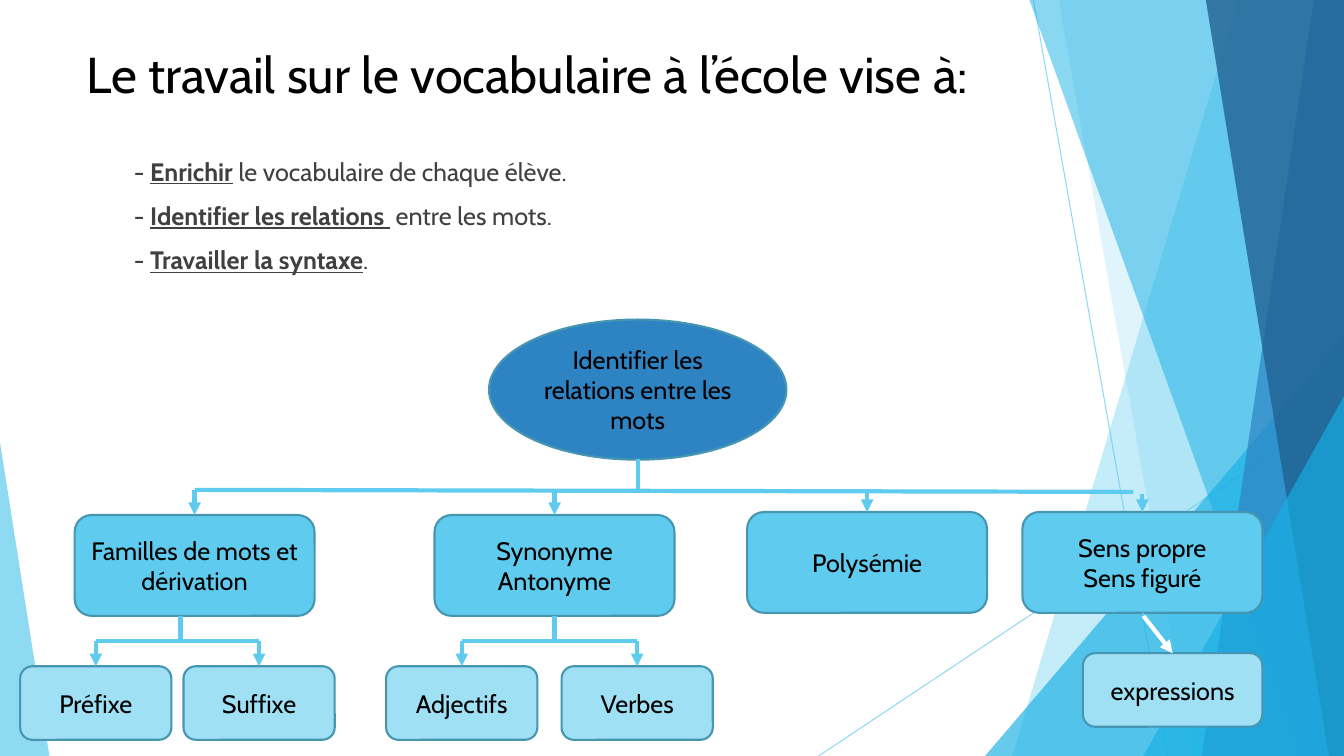
import pptx
import pptx.dml.color
import pptx.enum.shapes
import pptx.enum.text
import pptx.oxml
import pptx.oxml.ns
import pptx.util
from pptx.util import Inches

RGBColor = pptx.dml.color.RGBColor
MSO_SHAPE = pptx.enum.shapes.MSO_SHAPE
PP_ALIGN = pptx.enum.text.PP_ALIGN
MSO_ANCHOR = pptx.enum.text.MSO_ANCHOR

BLACK = RGBColor(0x00, 0x00, 0x00)
WHITE = RGBColor(0xFF, 0xFF, 0xFF)
GREY = RGBColor(0x40, 0x40, 0x40)
SKY = RGBColor(0x5F, 0xCB, 0xEF)
PALE_SKY = RGBColor(0x9F, 0xE0, 0xF5)
CYAN = RGBColor(0x17, 0xB0, 0xE4)
BLUE = RGBColor(0x2E, 0x83, 0xC3)
NAVY = RGBColor(0x22, 0x62, 0x92)
OUTLINE = RGBColor(0x46, 0x96, 0xB1)

WIDTH, HEIGHT = 13.33, 7.5


class SlideBuilder:
    font = "Cabin"
    text_size = 18

    def __init__(self, slide):
        self.slide = slide

    def set_alpha(self, color_format_parent, percent):
        """Make the solid colour found under an XML element translucent."""
        color = color_format_parent.find(".//" + pptx.oxml.ns.qn("a:srgbClr"))
        alpha = color.makeelement(pptx.oxml.ns.qn("a:alpha"), {"val": str(percent * 1000)})
        color.append(alpha)

    def add_run(self, paragraph, text, color, size=None, strong=False):
        """Add a run; a strong one is bold and underlined."""
        run = paragraph.add_run()
        run.text = text
        run.font.name = self.font
        run.font.size = pptx.util.Pt(size or self.text_size)
        run.font.color.rgb = color
        if strong:
            run.font.bold = True
            run.font.underline = True

    def pane(self, shape, color, opacity):
        """Turn a shape into a translucent pane of the background."""
        shape.shadow.inherit = False
        shape.fill.solid()
        shape.fill.fore_color.rgb = color
        shape.line.fill.background()
        self.set_alpha(shape.fill._xPr, opacity)

    def slanted_pane(self, top_left, bottom_left, color, opacity):
        """Add a pane from a slanted left edge to the slide's right edge."""
        builder = self.slide.shapes.build_freeform(Inches(top_left), 0)
        corners = [(WIDTH, 0), (WIDTH, HEIGHT), (bottom_left, HEIGHT)]
        builder.add_line_segments([(Inches(x), Inches(y)) for x, y in corners])
        self.pane(builder.convert_to_shape(), color, opacity)

    def triangle_pane(self, left, top, width, apex, color, opacity):
        """Add a triangle standing on the slide's bottom edge."""
        triangle = self.slide.shapes.add_shape(
            MSO_SHAPE.ISOSCELES_TRIANGLE,
            Inches(left), Inches(top), Inches(width), Inches(HEIGHT - top))
        triangle.adjustments[0] = apex
        self.pane(triangle, color, opacity)

    def line(self, start, end, color=SKY, width=3, arrow=False, opacity=None):
        connector = self.slide.shapes.add_connector(
            pptx.enum.shapes.MSO_CONNECTOR.STRAIGHT,
            *[Inches(length) for length in (*start, *end)])
        connector.line.color.rgb = color
        connector.line.width = pptx.util.Pt(width)
        properties = connector._element.spPr
        outline = connector.line._get_or_add_ln()
        if opacity:
            self.set_alpha(outline, opacity)
        if arrow:
            outline.append(outline.makeelement(
                pptx.oxml.ns.qn("a:tailEnd"), {"type": "triangle"}))
        properties.append(properties.makeelement(pptx.oxml.ns.qn("a:effectLst"), {}))

    def node(self, kind, left, top, width, height, fill, lines):
        shape = self.slide.shapes.add_shape(
            kind, Inches(left), Inches(top), Inches(width), Inches(height))
        shape.shadow.inherit = False
        shape.fill.solid()
        shape.fill.fore_color.rgb = fill
        shape.line.color.rgb = OUTLINE
        shape.line.width = pptx.util.Pt(1.5)
        frame = shape.text_frame
        frame.word_wrap = True
        frame.vertical_anchor = MSO_ANCHOR.MIDDLE
        for index, text in enumerate(lines):
            paragraph = frame.add_paragraph() if index else frame.paragraphs[0]
            paragraph.alignment = PP_ALIGN.CENTER
            self.add_run(paragraph, text, BLACK)

    def text_frame(self, left, top, width, height):
        box = self.slide.shapes.add_textbox(
            Inches(left), Inches(top), Inches(width), Inches(height))
        box.text_frame.word_wrap = True
        return box.text_frame

    def title(self, text):
        frame = self.text_frame(0.76, 0.38, 10.49, 0.94)
        self.add_run(frame.paragraphs[0], text, BLACK, size=36)

    def goals(self, goals):
        """Add the indented list of goals, each with a strong part and a rest."""
        frame = self.text_frame(0.73, 1.5, 9.4, 1.4)
        for index, (strong_part, rest) in enumerate(goals):
            paragraph = frame.add_paragraph() if index else frame.paragraphs[0]
            paragraph.space_before = pptx.util.Pt(10)
            paragraph._p.get_or_add_pPr().set("marL", str(Inches(0.5)))
            self.add_run(paragraph, "- ", GREY)
            self.add_run(paragraph, strong_part, GREY, strong=True)
            self.add_run(paragraph, rest, GREY)


def draw_background(builder):
    builder.line((10.25, 0), (11.58, HEIGHT), width=0.75, opacity=70)
    builder.line((WIDTH, 4.03), (8.12, HEIGHT), width=0.75, opacity=70)
    builder.slanted_pane(12.28, 10.04, SKY, 36)
    builder.slanted_pane(10.5, 11.83, SKY, 20)
    builder.triangle_pane(9.77, 3.33, 3.56, 1, CYAN, 66)
    builder.slanted_pane(10.21, 12.91, CYAN, 50)
    builder.slanted_pane(13.03, 11.92, BLUE, 70)
    builder.slanted_pane(11.96, 13.18, NAVY, 80)
    builder.triangle_pane(11.34, 3.93, 1.99, 1, CYAN, 66)
    builder.triangle_pane(0, 4.39, 0.49, 0, SKY, 70)


def draw_tree(builder):
    rounded = MSO_SHAPE.ROUNDED_RECTANGLE
    builder.node(MSO_SHAPE.OVAL, 4.85, 3.17, 2.95, 1.39, BLUE,
                 ["Identifier les relations entre les mots"])

    branch_width, branch_height = 2.38, 1
    branches = [
        (0.74, 5.11, 4.86, ["Familles de mots et dérivation"]),
        (4.31, 5.11, 4.87, ["Synonyme", "Antonyme"]),
        (7.41, 5.08, 4.88, ["Polysémie"]),
        (10.14, 5.08, 4.9, ["Sens propre", "Sens figuré"]),
    ]
    builder.line((6.33, 4.55), (6.33, 4.86))
    builder.line((1.93, 4.86), (11.24, 4.88))
    for left, top, bar, lines in branches:
        builder.node(rounded, left, top, branch_width, branch_height, SKY, lines)
        center = left + branch_width / 2
        builder.line((center, bar), (center, top), arrow=True)

    leaf_width, leaf_height, leaf_top, leaf_bar = 1.5, 0.73, 6.61, 6.36
    leaf_groups = [
        (1.79, [(0.2, "Préfixe"), (1.82, "Suffixe")]),
        (5.5, [(3.83, "Adjectifs"), (5.57, "Verbes")]),
    ]
    for stem, leaves in leaf_groups:
        centers = [left + leaf_width / 2 for left, _ in leaves]
        builder.line((stem, 6.11), (stem, leaf_bar))
        builder.line((centers[0], leaf_bar), (centers[-1], leaf_bar))
        for center, (left, word) in zip(centers, leaves):
            builder.node(rounded, left, leaf_top, leaf_width, leaf_height, PALE_SKY, [word])
            builder.line((center, leaf_bar), (center, leaf_top), arrow=True)

    builder.node(rounded, 10.74, 6.48, 1.78, leaf_height, PALE_SKY, ["expressions"])
    builder.line((11.33, 6.08), (11.63, 6.48), width=1, arrow=True)
    builder.line((11.34, 6.11), (11.63, 6.48), color=WHITE, arrow=True)


def main():
    presentation = pptx.Presentation()
    presentation.slide_width = Inches(WIDTH)
    presentation.slide_height = Inches(HEIGHT)
    builder = SlideBuilder(presentation.slides.add_slide(presentation.slide_layouts[6]))
    draw_background(builder)
    builder.title("Le travail sur le vocabulaire à l’école vise à:")
    builder.goals([
        ("Enrichir", " le vocabulaire de chaque élève."),
        ("Identifier les relations ", " entre les mots."),
        ("Travailler la syntaxe", "."),
    ])
    draw_tree(builder)
    presentation.save("out.pptx")


if __name__ == "__main__":
    main()
